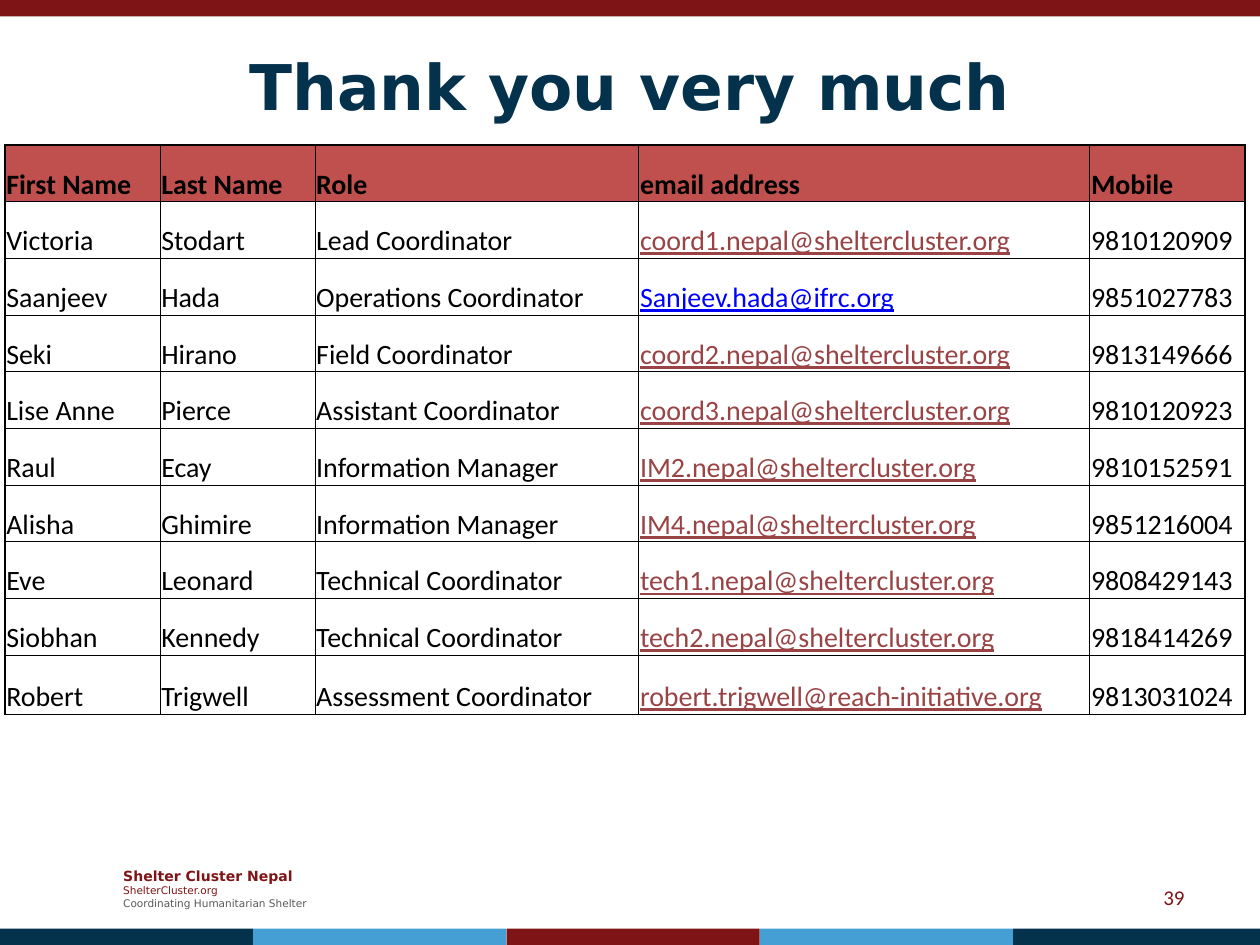
from lxml import etree
from pptx import Presentation
from pptx import util as u
from pptx.dml.color import RGBColor
from pptx.enum import shapes, text
from pptx.oxml.ns import qn

WIDTH, HEIGHT = 10, 7.5
BAND = 0.13
COLORS = {"navy": "04314C", "sky": "459FD5", "maroon": "7F1416", "gray": "595959",
          "header": "C0504D", "email": "994345", "blue": "0000FF", "black": "000000"}
HEADING_FONT, BODY_FONT = "DejaVu Sans", "Calibri"

COLUMN_WIDTHS = [1.23, 1.23, 2.57, 3.58, 1.23]
ROW_HEIGHT, LAST_ROW_HEIGHT = 0.45, 0.47
EMAIL_COLUMN = 3
CONTACTS = [
    ("First Name", "Last Name", "Role", "email address", "Mobile"),
    ("Victoria", "Stodart", "Lead Coordinator", "coord1.nepal@sheltercluster.org", "9810120909"),
    ("Saanjeev", "Hada", "Operations Coordinator", "Sanjeev.hada@ifrc.org", "9851027783"),
    ("Seki", "Hirano", "Field Coordinator", "coord2.nepal@sheltercluster.org", "9813149666"),
    ("Lise Anne", "Pierce", "Assistant Coordinator", "coord3.nepal@sheltercluster.org",
     "9810120923"),
    ("Raul", "Ecay", "Information Manager", "IM2.nepal@sheltercluster.org", "9810152591"),
    ("Alisha", "Ghimire", "Information Manager", "IM4.nepal@sheltercluster.org", "9851216004"),
    ("Eve", "Leonard", "Technical Coordinator", "tech1.nepal@sheltercluster.org", "9808429143"),
    ("Siobhan", "Kennedy", "Technical Coordinator", "tech2.nepal@sheltercluster.org",
     "9818414269"),
    ("Robert", "Trigwell", "Assessment Coordinator", "robert.trigwell@reach-initiative.org",
     "9813031024"),
]


def rgb(name):
    return RGBColor.from_string(COLORS[name])


def add_span(para, words, size, font, color, bold=False, underline=False):
    span = para.add_run()
    span.text = words
    span.font.size = u.Pt(size)
    span.font.name = font
    span.font.color.rgb = rgb(color)
    span.font.bold = bold
    span.font.underline = underline


def add_text(page, left, top, width, height, lines, align=text.PP_ALIGN.LEFT):
    """Add a text box; each line is (words, size, font, color, bold)."""
    box = page.shapes.add_textbox(*map(u.Inches, (left, top, width, height)))
    frame = box.text_frame
    frame.word_wrap = True
    frame.vertical_anchor = text.MSO_ANCHOR.MIDDLE
    for index, line in enumerate(lines):
        para = frame.add_paragraph() if index else frame.paragraphs[0]
        para.alignment = align
        add_span(para, *line)


def add_band(page, left, top, width, color):
    band = page.shapes.add_shape(shapes.MSO_SHAPE.RECTANGLE,
                                 *map(u.Inches, (left, top, width, BAND)))
    band.shadow.inherit = False
    band.fill.solid()
    band.fill.fore_color.rgb = rgb(color)
    band.line.fill.background()


def add_bands(page):
    add_band(page, 0, 0, WIDTH, "maroon")
    step = WIDTH / 5
    for index, color in enumerate(["navy", "sky", "maroon", "sky", "navy"]):
        add_band(page, index * (step + 0.01), HEIGHT - BAND,
                 step if index == 4 else step + 0.01, color)


def set_borders(cell, widths):
    """Draw the left, right, top and bottom lines, with widths in points."""
    properties = cell._tc.get_or_add_tcPr()
    for tag, width in zip(("a:lnL", "a:lnR", "a:lnT", "a:lnB"), widths):
        line = etree.SubElement(properties, qn(tag), w=str(u.Pt(width)))
        fill = etree.SubElement(line, qn("a:solidFill"))
        etree.SubElement(fill, qn("a:srgbClr"), val=COLORS["black"])


def fill_cell(cell, words, is_header, is_email):
    cell.margin_left = cell.margin_right = cell.margin_top = u.Inches(0.01)
    cell.margin_bottom = 0
    cell.vertical_anchor = text.MSO_ANCHOR.BOTTOM
    if is_header:
        cell.fill.solid()
        cell.fill.fore_color.rgb = rgb("header")
    else:
        cell.fill.background()
    color = "black"
    if is_email:
        color = "blue" if words.endswith("ifrc.org") else "email"
    add_span(cell.text_frame.paragraphs[0], words, 16, BODY_FONT, color, is_header, is_email)


def add_contacts(page, left, top):
    rows, columns = len(CONTACTS), len(COLUMN_WIDTHS)
    heights = [ROW_HEIGHT] * (rows - 1) + [LAST_ROW_HEIGHT]
    frame = page.shapes.add_table(rows, columns, u.Inches(left), u.Inches(top),
                                  u.Inches(sum(COLUMN_WIDTHS)), u.Inches(sum(heights)))
    table = frame.table
    table.first_row = table.horz_banding = False
    for column, width in zip(table.columns, COLUMN_WIDTHS):
        column.width = u.Inches(width)
    for r, contact in enumerate(CONTACTS):
        table.rows[r].height = u.Inches(heights[r])
        for c, words in enumerate(contact):
            cell = table.cell(r, c)
            on_edge = (c == 0, c == columns - 1, r == 0, r == rows - 1)
            set_borders(cell, [1 if outer else 0.5 for outer in on_edge])
            fill_cell(cell, words, r == 0, r > 0 and c == EMAIL_COLUMN)


def main():
    deck = Presentation()
    deck.slide_width, deck.slide_height = u.Inches(WIDTH), u.Inches(HEIGHT)
    page = deck.slides.add_slide(deck.slide_layouts[6])
    add_text(page, 0.88, 6.83, 1.83, 0.44, [
        ("Shelter Cluster Nepal", 8, HEADING_FONT, "maroon", True),
        ("ShelterCluster.org", 6, HEADING_FONT, "maroon"),
        ("Coordinating Humanitarian Shelter", 6, HEADING_FONT, "gray"),
    ])
    add_bands(page)
    add_text(page, 0.5, 0.05, WIDTH - 1, 1.25,
             [("Thank you very much", 36, HEADING_FONT, "navy", True)], text.PP_ALIGN.CENTER)
    add_text(page, 7.17, 6.92, 2.33, 0.4,
             [("39", 12, BODY_FONT, "maroon")], text.PP_ALIGN.RIGHT)
    add_contacts(page, 0.04, 1.15)
    deck.save("out.pptx")


if __name__ == "__main__":
    main()
